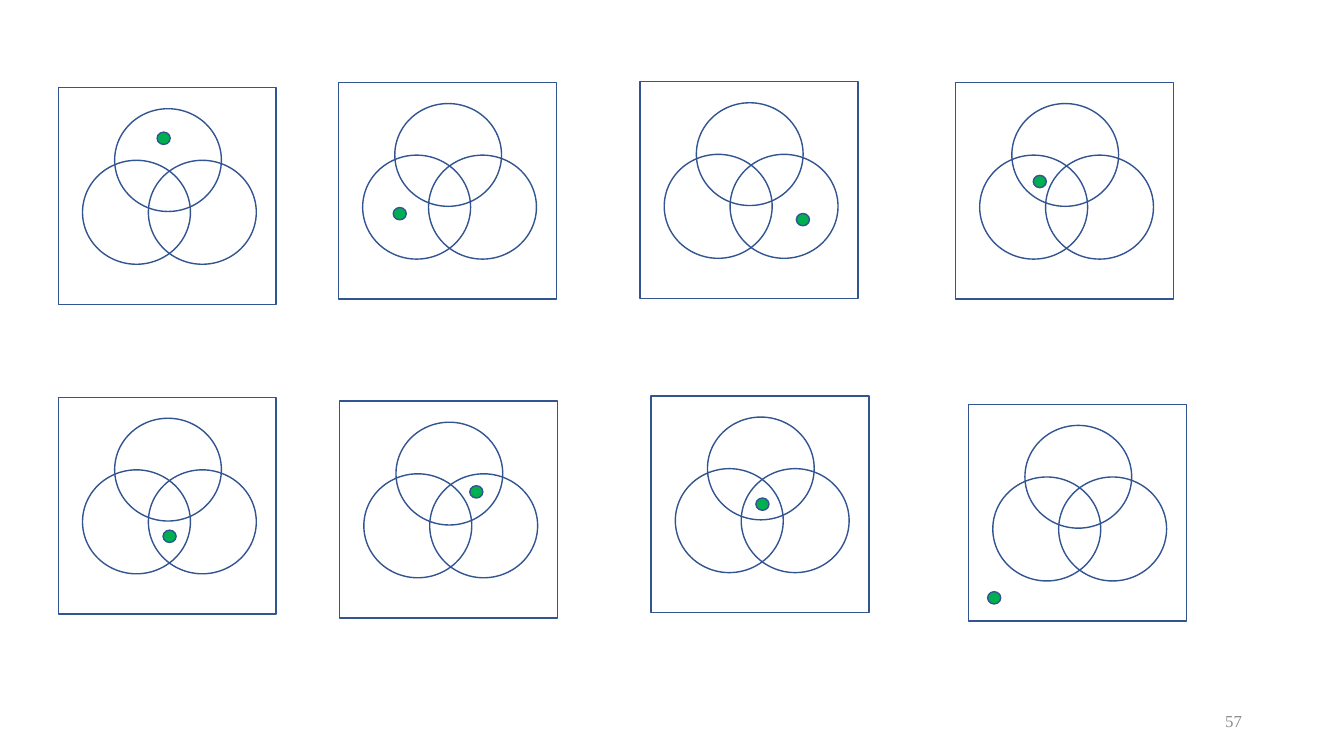
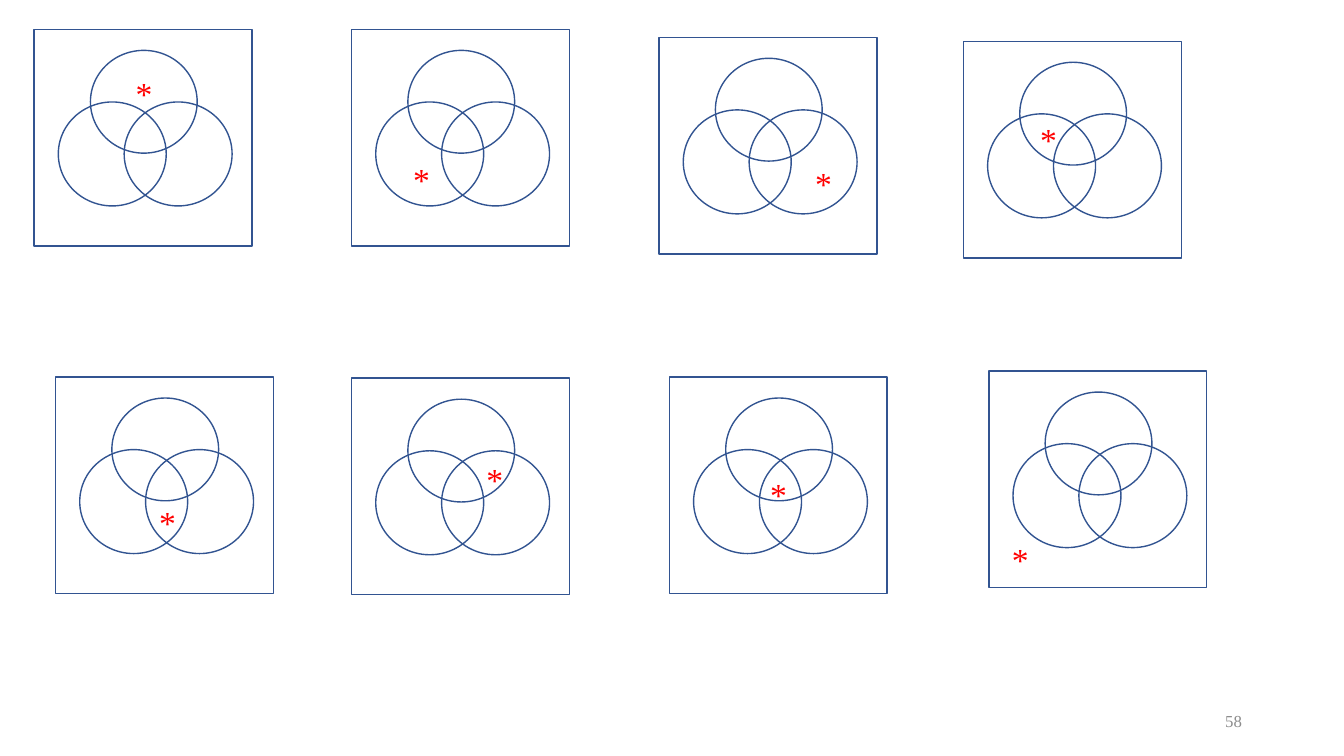
"""Build two slides of three-set Venn diagrams, marking one region in each."""
import dataclasses

import pptx
import pptx.dml.color
import pptx.enum.shapes
import pptx.enum.text
import pptx.util

Cm = pptx.util.Cm
Pt = pptx.util.Pt
RGB = pptx.dml.color.RGBColor
MSO_SHAPE = pptx.enum.shapes.MSO_SHAPE


@dataclasses.dataclass(frozen=True)
class Theme:
    outline: RGB = RGB.from_string("325491")
    dot: RGB = RGB.from_string("00B050")
    star: RGB = RGB.from_string("FF0000")
    page_number: RGB = RGB.from_string("8C8C8C")
    font: str = "Times New Roman"
    star_size: Pt = Pt(24)
    page_number_size: Pt = Pt(12)
    outline_width: Pt = Pt(1)


theme = Theme()

FRAME = (MSO_SHAPE.RECTANGLE, 0, 0, 5.49, 5.46)
LEFT_SET = (MSO_SHAPE.OVAL, 0.61, 1.83, 2.72, 2.62)
TOP_SET = (MSO_SHAPE.OVAL, 1.42, 0.53, 2.69, 2.59)
RIGHT_SET = (MSO_SHAPE.OVAL, 2.27, 1.83, 2.72, 2.62)
DOT_SIZE = (0.33, 0.31)
STAR_SIZE = (0.94, 1.27)

# Each entry: diagram corner, then mark offset from that corner.
DOT_DIAGRAMS = [
    ((1.47, 2.21), (2.49, 1.12)),
    ((8.53, 2.08), (1.38, 3.15)),
    ((16.13, 2.06), (3.94, 3.32)),
    ((24.08, 2.08), (1.96, 2.34)),
    ((1.47, 10.01), (2.64, 3.35)),
    ((8.56, 10.11), (3.28, 2.13)),
    ((16.41, 9.98), (2.64, 2.57)),
    ((24.41, 10.19), (0.48, 4.72)),
]
STAR_DIAGRAMS = [
    ((0.86, 0.74), (2.31, 0.97)),
    ((8.86, 0.74), (1.3, 3.15)),
    ((16.61, 0.94), (3.68, 3.05)),
    ((24.28, 1.04), (1.68, 1.83)),
    ((1.4, 9.5), (2.36, 3.02)),
    ((8.86, 9.53), (3.15, 1.9)),
    ((16.87, 9.5), (2.29, 2.31)),
    ((24.92, 9.35), (0.33, 4.11)),
]


def add_outlined(shapes, preset, left, top, width, height, fill=None):
    """Add a preset shape with the shared outline and an optional fill."""
    outlined = shapes.add_shape(preset, Cm(left), Cm(top), Cm(width), Cm(height))
    outlined.shadow.inherit = False
    outlined.line.color.rgb = theme.outline
    outlined.line.width = theme.outline_width
    if fill is None:
        outlined.fill.background()
    else:
        outlined.fill.solid()
        outlined.fill.fore_color.rgb = fill


def add_label(slide, text, left, top, width, height, size, color):
    """Add a one-run text box and return its text frame."""
    label = slide.shapes.add_textbox(Cm(left), Cm(top), Cm(width), Cm(height)).text_frame
    run = label.paragraphs[0].add_run()
    run.text = text
    run.font.name = theme.font
    run.font.size = size
    run.font.color.rgb = color
    return label


deck = pptx.Presentation()
deck.slide_width = Cm(33.87)
deck.slide_height = Cm(19.05)

for number, mark, diagrams in (("57", "dot", DOT_DIAGRAMS), ("58", "star", STAR_DIAGRAMS)):
    slide = deck.slides.add_slide(deck.slide_layouts[6])

    for (left, top), (mark_x, mark_y) in diagrams:
        venn = slide.shapes.add_group_shape()
        for preset, x, y, width, height in (FRAME, LEFT_SET, TOP_SET, RIGHT_SET):
            add_outlined(venn.shapes, preset, left + x, top + y, width, height)
        if mark == "dot":
            add_outlined(slide.shapes, MSO_SHAPE.OVAL, left + mark_x, top + mark_y,
                         *DOT_SIZE, fill=theme.dot)
        else:
            star = add_label(slide, "*", left + mark_x, top + mark_y, *STAR_SIZE,
                             theme.star_size, theme.star)
            star.word_wrap = False
            star.auto_size = pptx.enum.text.MSO_AUTO_SIZE.SHAPE_TO_FIT_TEXT

    page_number = add_label(slide, number, 23.93, 17.65, 7.62, 1.02,
                            theme.page_number_size, theme.page_number)
    page_number.word_wrap = True
    page_number.vertical_anchor = pptx.enum.text.MSO_ANCHOR.MIDDLE
    page_number.paragraphs[0].alignment = pptx.enum.text.PP_ALIGN.RIGHT

deck.save("out.pptx")
